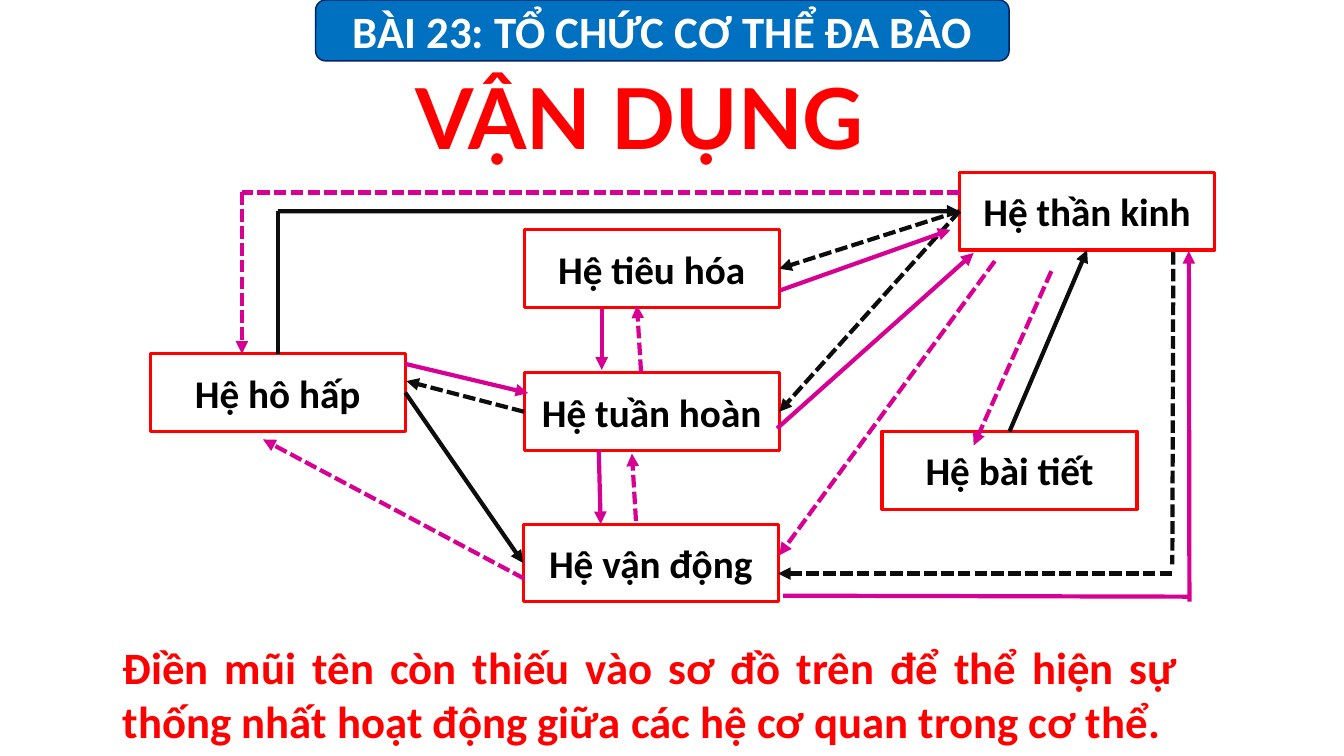
from lxml import etree
from pptx import Presentation
from pptx import util as u
from pptx.dml.color import RGBColor
from pptx.enum import dml, shapes, text
from pptx.oxml.ns import qn

COLOURS = {
    "white": "FFFFFF", "black": "000000", "ink": "0D0D0D", "red": "FF0000",
    "magenta": "D60093", "blue": "0070C0", "navy": "002060",
}
TOP, LEFT, BOTTOM, RIGHT = range(4)
BOX_SIZE = (182.2, 55.5)


class Diagram:
    def __init__(self, page):
        self.page = page
        self.font = "Calibri"
        self.boxes = {}

    def colour(self, name):
        return RGBColor.from_string(COLOURS[name])

    def set_wording(self, shape, wording, size, colour, align, font=None):
        frame = shape.text_frame
        frame.word_wrap = True
        frame.text = wording
        para = frame.paragraphs[0]
        para.alignment = align
        for span in para.runs:
            span.font.name = font or self.font
            span.font.size = u.Pt(size)
            span.font.bold = True
            span.font.color.rgb = self.colour(colour)

    def text_box(self, place, wording, size, align, font=None):
        box = self.page.shapes.add_textbox(*map(u.Pt, place))
        self.set_wording(box, wording, size, "red", align, font)

    def panel(self, kind, place, wording, size, fill, outline, width, colour):
        """Filled and outlined shape with centred text."""
        box = self.page.shapes.add_shape(kind, *map(u.Pt, place))
        box.shadow.inherit = False
        box.fill.solid()
        box.fill.fore_color.rgb = self.colour(fill)
        box.line.color.rgb = self.colour(outline)
        box.line.width = u.Pt(width)
        box.text_frame.vertical_anchor = text.MSO_ANCHOR.MIDDLE
        self.set_wording(box, wording, size, colour, text.PP_ALIGN.CENTER)
        return box

    def system(self, name, left, top):
        """Box for one organ system, kept by name so that lines can join it."""
        self.boxes[name] = self.panel(
            shapes.MSO_SHAPE.RECTANGLE, (left, top, *BOX_SIZE),
            name, 28, "white", "red", 2.25, "black")

    def line(self, start, end, colour, dashed=False, arrow=True):
        """Each end is a point, or a system name with the side to join."""
        points = [(0, 0) if isinstance(stop[0], str) else stop for stop in (start, end)]
        link = self.page.shapes.add_connector(
            shapes.MSO_CONNECTOR.STRAIGHT, *(u.Pt(n) for point in points for n in point))
        for stop, join in ((start, link.begin_connect), (end, link.end_connect)):
            if isinstance(stop[0], str):
                join(self.boxes[stop[0]], stop[1])
        link.line.color.rgb = self.colour(colour)
        link.line.width = u.Pt(3)
        outline = link._element.spPr.find(qn("a:ln"))
        if dashed:
            link.line.dash_style = dml.MSO_LINE.SQUARE_DOT
            outline.find(qn("a:prstDash")).set("val", "sysDash")
        if arrow:
            etree.SubElement(outline, qn("a:tailEnd"), type="triangle")
        etree.SubElement(link._element.spPr, qn("a:effectLst"))


DIGESTION, MOVEMENT, BREATHING = "Hệ tiêu hóa", "Hệ vận động", "Hệ hô hấp"
CIRCULATION, EXCRETION, NERVES = "Hệ tuần hoàn", "Hệ bài tiết", "Hệ thần kinh"
SYSTEMS = [
    (DIGESTION, 374.4, 164.2), (MOVEMENT, 373.7, 374.4), (BREATHING, 107.3, 252.7),
    (CIRCULATION, 374.4, 266.4), (EXCRETION, 630, 308.2), (NERVES, 685.4, 123.1),
]
BREATHING_BEND = (198.4, 150.9)
NERVES_BEND = (172.8, 137.5)

# start, end, dashed, arrow
GIVEN_LINES = [
    ((EXCRETION, TOP), (NERVES, BOTTOM), False, True),
    (BREATHING_BEND, (NERVES, LEFT), False, True),
    ((BREATHING, RIGHT), (MOVEMENT, LEFT), False, True),
    (BREATHING_BEND, (BREATHING, TOP), False, False),
    ((NERVES, LEFT), (DIGESTION, RIGHT), True, True),
    ((NERVES, LEFT), (CIRCULATION, RIGHT), True, True),
    ((CIRCULATION, LEFT), (290.2, 272.2), True, True),
    ((837.4, 409.7), (555.8, 409.7), True, True),
    ((838.1, 180), (837.4, 403.2), True, False),
]
ANSWER_LINES = [
    (NERVES_BEND, (172.8, 252.7), True, True),
    ((289.4, 259.9), (377.3, 280.8), False, True),
    ((710.6, 186.5), (556.6, 396.7), True, True),
    ((751, 193.7), (695.5, 318.2), True, True),
    ((685.4, 137.5), NERVES_BEND, True, False),
    ((374.4, 413.3), (187.9, 313.9), True, True),
    ((557.3, 207.4), (679, 164.2), False, True),
    ((555.1, 306), (695.5, 180.7), False, True),
    ((429.8, 221), (429.8, 264.2), False, True),
    ((427.7, 321.8), (429.1, 374.4), False, True),
    ((454.3, 372.2), (451.4, 324), True, True),
    ((457.9, 265.7), (455, 218.2), True, True),
    ((849.6, 429.8), (849.2, 179.3), False, True),
    ((849.6, 426.2), (559.4, 425.5), False, False),
]


def main():
    deck = Presentation()
    deck.slide_width, deck.slide_height = u.Pt(960), u.Pt(540)
    diagram = Diagram(deck.slides.add_slide(deck.slide_layouts[6]))

    diagram.panel(shapes.MSO_SHAPE.ROUNDED_RECTANGLE, (225.4, 0, 495.4, 43.5),
                  "BÀI 23: TỔ CHỨC CƠ THỂ ĐA BÀO", 32, "blue", "navy", 1, "white")
    diagram.text_box((289.4, 43.2, 371.5, 80), "VẬN DỤNG", 60,
                     text.PP_ALIGN.LEFT, "Lato")
    for system in SYSTEMS:
        diagram.system(*system)
    for colour, lines in (("ink", GIVEN_LINES), ("magenta", ANSWER_LINES)):
        for start, end, dashed, arrow in lines:
            diagram.line(start, end, colour, dashed, arrow)
    diagram.text_box(
        (80.6, 453.6, 768.2, 85),
        "Điền mũi tên còn thiếu vào sơ đồ trên để thể hiện sự thống nhất "
        "hoạt động giữa các hệ cơ quan trong cơ thể.",
        32, text.PP_ALIGN.JUSTIFY)

    deck.save("out.pptx")


if __name__ == "__main__":
    main()
